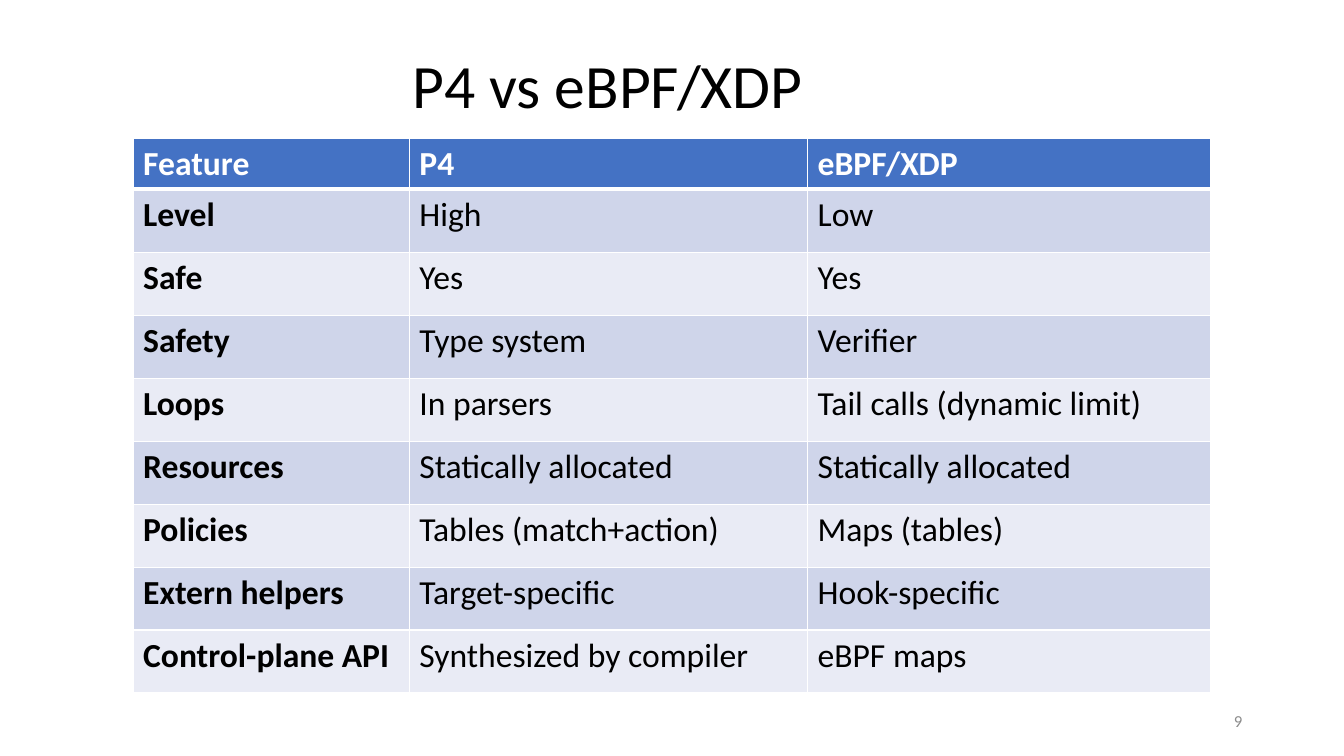
"""Builds a slide with a table that compares P4 with eBPF/XDP."""
from dataclasses import dataclass

from lxml import etree
from pptx import Presentation
from pptx import util as u
from pptx.dml.color import RGBColor
from pptx.enum import text
from pptx.oxml import ns


@dataclass(frozen=True)
class Theme:
    font: str = "Calibri"
    title_size: int = 44
    table_size: int = 24
    number_size: int = 12
    ink: str = "000000"
    white: str = "FFFFFF"
    grey: str = "8C8C8C"
    header: str = "4472C4"
    bands: tuple = ("CFD5EA", "E9EBF5")


def add_run(paragraph, words, size, color, bold=False):
    run = paragraph.add_run()
    run.text = words
    run.font.name = theme.font
    run.font.size = u.Pt(size)
    run.font.bold = bold
    run.font.color.rgb = RGBColor.from_string(color)


def add_border(cell, side, points):
    line = etree.SubElement(cell._tc.get_or_add_tcPr(), ns.qn(f"a:{side}"), w=str(u.Pt(points)))
    fill = etree.SubElement(line, ns.qn("a:solidFill"))
    etree.SubElement(fill, ns.qn("a:srgbClr"), val=theme.white)


theme = Theme()
features = [
    ("Feature", "P4", "eBPF/XDP"),
    ("Level", "High", "Low"),
    ("Safe", "Yes", "Yes"),
    ("Safety", "Type system", "Verifier"),
    ("Loops", "In parsers", "Tail calls (dynamic limit)"),
    ("Resources", "Statically allocated", "Statically allocated"),
    ("Policies", "Tables (match+action)", "Maps (tables)"),
    ("Extern helpers", "Target-specific", "Hook-specific"),
    ("Control-plane API", "Synthesized by compiler", "eBPF maps"),
]
column_widths = [2.74, 3.95, 4]
table_height, header_height = 5.5, 0.5
row_height = (table_height - header_height) / (len(features) - 1)

presentation = Presentation()
presentation.slide_width = u.Inches(13.33)
presentation.slide_height = u.Inches(7.5)
slide = presentation.slides.add_slide(presentation.slide_layouts[5])

title = slide.shapes.title
title.left, title.top, title.width, title.height = map(u.Inches, (3.99, 0.15, 4.53, 1.45))
title.text_frame.vertical_anchor = text.MSO_ANCHOR.MIDDLE
paragraph = title.text_frame.paragraphs[0]
paragraph.alignment = text.PP_ALIGN.LEFT
paragraph.line_spacing = 0.9
add_run(paragraph, "P4 vs eBPF/XDP", theme.title_size, theme.ink)

table = slide.shapes.add_table(
    len(features), len(column_widths),
    u.Inches(1.32), u.Inches(1.37), u.Inches(sum(column_widths)), u.Inches(table_height),
).table
for column, width in zip(table.columns, column_widths):
    column.width = u.Inches(width)

for row_index, row_words in enumerate(features):
    is_header = row_index == 0
    table.rows[row_index].height = u.Inches(header_height if is_header else row_height)
    fill_color = theme.header if is_header else theme.bands[(row_index - 1) % 2]
    for column_index, words in enumerate(row_words):
        cell = table.cell(row_index, column_index)
        for side in ("lnL", "lnR", "lnT", "lnB"):
            heavy = (row_index, side) in ((0, "lnB"), (1, "lnT"))
            add_border(cell, side, 3 if heavy else 1)
        cell.fill.solid()
        cell.fill.fore_color.rgb = RGBColor.from_string(fill_color)
        add_run(cell.text_frame.paragraphs[0], words, theme.table_size,
                theme.white if is_header else theme.ink, is_header or column_index == 0)

number_box = slide.shapes.add_textbox(*map(u.Inches, (9.42, 6.95, 3, 0.4)))
number_box.text_frame.word_wrap = True
number_box.text_frame.vertical_anchor = text.MSO_ANCHOR.MIDDLE
paragraph = number_box.text_frame.paragraphs[0]
paragraph.alignment = text.PP_ALIGN.RIGHT
add_run(paragraph, "9", theme.number_size, theme.grey)

presentation.save("out.pptx")
